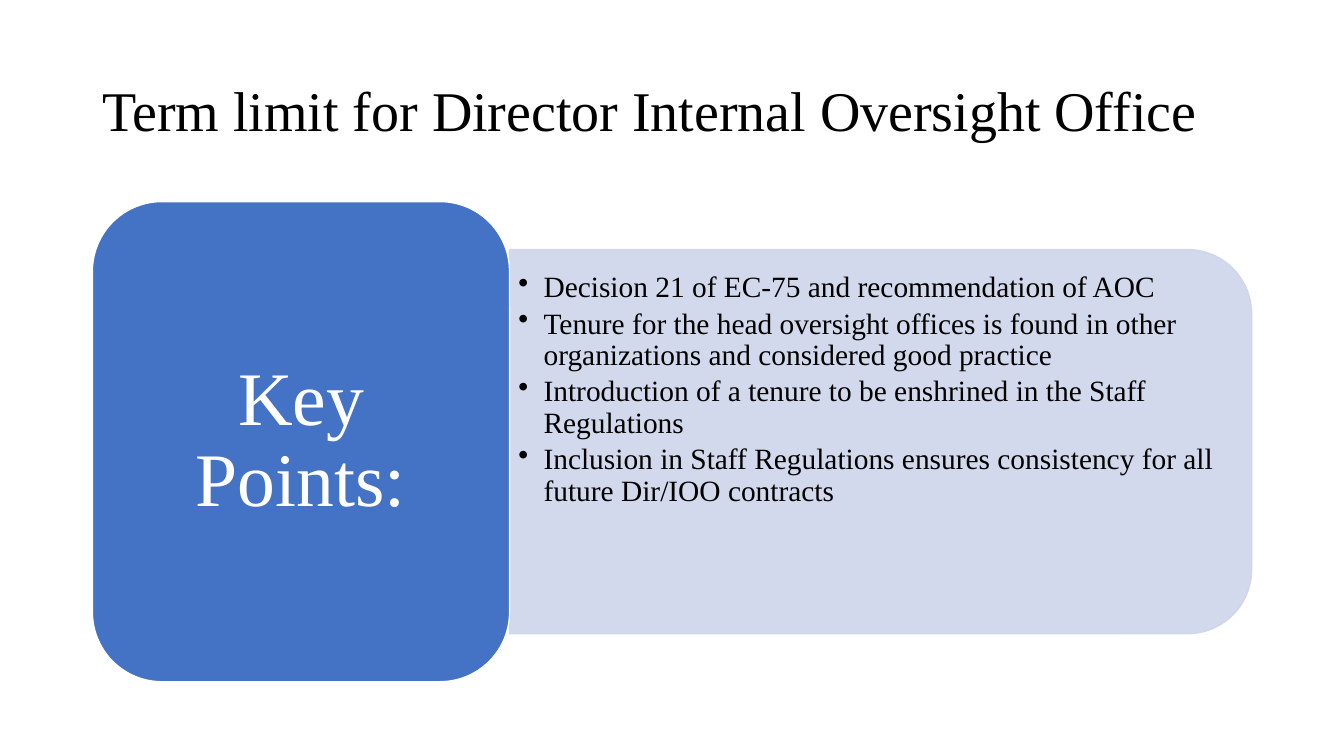
"""Build the slide on the term limit for the Director of the Internal Oversight Office."""
from lxml.etree import SubElement
from pptx import Presentation
from pptx.dml.color import RGBColor
from pptx.enum.shapes import MSO_SHAPE as Shape
from pptx.enum.text import MSO_ANCHOR as Anchor, PP_ALIGN as Align
from pptx.oxml.ns import qn
from pptx.util import Pt

TITLE = "Term limit for Director Internal Oversight Office"
HEADING = "Key Points:"
POINTS = [
    "Decision 21 of EC-75 and recommendation of AOC",
    "Tenure for the head oversight offices is found in other organizations and considered good practice",
    "Introduction of a tenure to be enshrined in the Staff Regulations",
    "Inclusion in Staff Regulations ensures consistency for all future Dir/IOO contracts",
]

FONT = "Times New Roman"
BLACK = RGBColor(0x00, 0x00, 0x00)
WHITE = RGBColor(0xFF, 0xFF, 0xFF)
BLUE = RGBColor(0x44, 0x72, 0xC4)
PALE = RGBColor(0xCF, 0xD5, 0xEA)

LEFT, TOP = 66, 144
HEADING_W, HEADING_H = 298, 343
PANEL_W, PANEL_H = 530, 274.4
PANEL_LEFT = LEFT + HEADING_W
MIDDLE = TOP + HEADING_H / 2


def write(shape, lines, size, color=BLACK, align=Align.LEFT, anchor=Anchor.MIDDLE,
          inset=(7.2, 3.6), indent=0, after=0):
    """Fill a shape with paragraphs; a positive indent makes them bulleted."""
    frame = shape.text_frame
    frame.word_wrap = True
    frame.vertical_anchor = anchor
    frame.margin_left = frame.margin_right = Pt(inset[0])
    frame.margin_top = frame.margin_bottom = Pt(inset[1])
    for number, line in enumerate(lines):
        paragraph = frame.add_paragraph() if number else frame.paragraphs[0]
        paragraph.alignment = align
        paragraph.line_spacing = 0.9
        paragraph.space_after = Pt(after)
        run = paragraph.add_run()
        run.text = line
        run.font.name, run.font.size, run.font.color.rgb = FONT, Pt(size), color
        if indent:
            props = paragraph._p.get_or_add_pPr()
            props.set("marL", str(Pt(indent)))
            props.set("indent", str(-Pt(indent)))
            SubElement(props, qn("a:buChar"), char="•")


def add_block(slide, kind, box, fill, line):
    """Add a filled preset shape with a thin outline."""
    block = slide.shapes.add_shape(kind, *map(Pt, box))
    block.shadow.inherit = False
    block.fill.solid()
    block.fill.fore_color.rgb = fill
    block.line.color.rgb = line
    block.line.width = Pt(1)
    return block


def main():
    """Lay out the title, the panel of points and its heading."""
    deck = Presentation()
    deck.slide_width, deck.slide_height = Pt(960), Pt(540)
    slide = deck.slides.add_slide(deck.slide_layouts[6])

    title = slide.shapes.add_textbox(Pt(LEFT), Pt(28.75), Pt(828), Pt(104.4))
    write(title, [TITLE], 40)

    panel_box = (PANEL_LEFT + (PANEL_W - PANEL_H) / 2, MIDDLE - PANEL_W / 2, PANEL_H, PANEL_W)
    panel = add_block(slide, Shape.ROUND_2_SAME_RECTANGLE, panel_box, PALE, PALE)
    panel.rotation = 90
    for color in panel._element.spPr.iter(qn("a:srgbClr")):
        SubElement(color, qn("a:alpha"), val="90000")

    points = slide.shapes.add_textbox(Pt(PANEL_LEFT), Pt(MIDDLE - 124), Pt(516), Pt(248))
    write(points, POINTS, 21, anchor=Anchor.TOP, inset=(6.3, 3.15), indent=18, after=3.15)

    heading = add_block(slide, Shape.ROUNDED_RECTANGLE,
                        (LEFT, TOP, HEADING_W, HEADING_H), BLUE, WHITE)
    write(heading, [HEADING], 54, color=WHITE, align=Align.CENTER, inset=(16.2, 8.1))

    deck.save("out.pptx")


if __name__ == "__main__":
    main()
